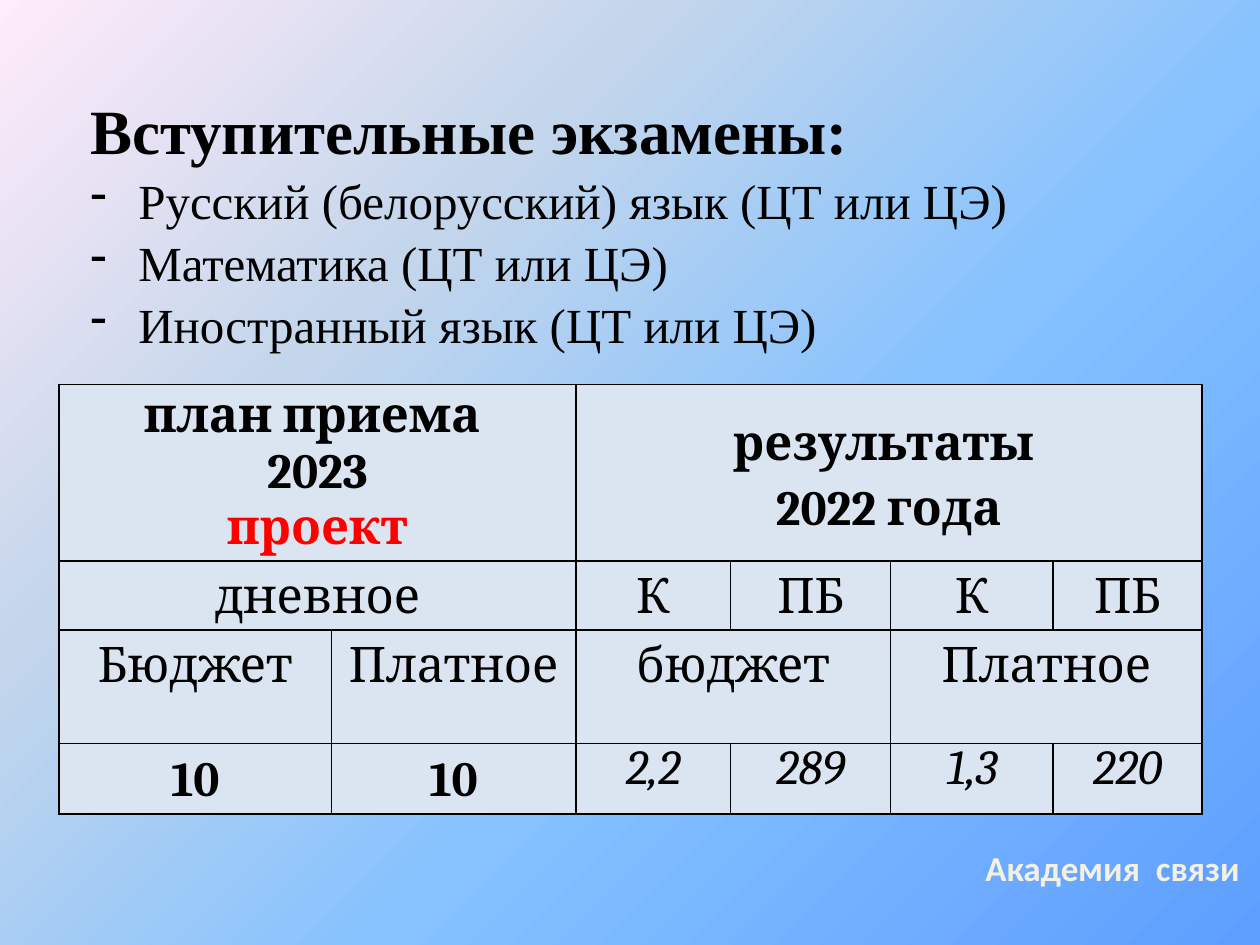
from dataclasses import dataclass

from lxml import etree
from pptx import Presentation
from pptx import util as u
from pptx.dml.color import RGBColor
from pptx.enum import text
from pptx.oxml import ns, parse_xml


@dataclass(frozen=True)
class Theme:
    """Colours, fonts and type sizes of the deck."""
    ink: str = "000000"
    accent: str = "FF0000"
    cell: str = "DBE5F1"
    footer: str = "F4F1E3"
    footer_edge: str = "254061"
    backdrop: tuple = ((0, "5E9EFF"), (40, "85C2FF"), (70, "C4D6EB"), (100, "FFEBFA"))
    body_font: str = "Times New Roman"
    table_font: str = "Cambria"
    footer_font: str = "Calibri"
    heading_size: int = 36
    text_size: int = 28
    footer_size: int = 20


THEME = Theme()
CENTER = text.PP_ALIGN.CENTER
EXAMS = ("Русский (белорусский) язык (ЦТ или ЦЭ)", "Математика (ЦТ или ЦЭ)",
         "Иностранный язык (ЦТ или ЦЭ)")
COLUMNS = (2.16, 1.94, 1.23, 1.27, 1.29, 1.18)
ROWS = (1.39, 0.55, 0.9, 0.56)
BOLD = {"bold": True}
TOTAL = {"line_spacing": 1.15, "space_after": u.Pt(10)}
SCORE = {"line_spacing": 0.9}
SPACED = {"line_spacing": 1.15}
TIGHT = {}
CELLS = (
    (0, 0, 2, ("план приема ", "2023", "проект"), BOLD, TIGHT),
    (0, 2, 4, ("результаты ", "2022 года"), BOLD, SPACED),
    (1, 0, 2, ("дневное",), {}, SPACED),
    *((1, 2 + i, 1, (name,), {}, SPACED) for i, name in enumerate(("К", "ПБ") * 2)),
    (2, 0, 1, ("Бюджет",), {}, SPACED),
    (2, 1, 1, ("Платное",), {}, SPACED),
    (2, 2, 2, ("бюджет",), {}, SPACED),
    (2, 4, 2, ("Платное",), {}, SPACED),
    *((3, i, 1, ("10",), BOLD, TOTAL) for i in range(2)),
    *((3, 2 + i, 1, (score,), {"italic": True}, SCORE)
      for i, score in enumerate(("2,2", "289", "1,3", "220"))),
)


def assign(target, values):
    """Set every attribute named in values on target."""
    for name, value in values.items():
        setattr(target, name, value)


def add_span(para, words, color, **font):
    """Append a run with the given colour and font values."""
    span = para.add_run()
    span.text = words
    assign(span.font, font)
    span.font.color.rgb = RGBColor.from_string(color)
    return span


def line_xml(tag, color):
    """Return a one-point solid line element."""
    return parse_xml(f'<a:{tag} {ns.nsdecls("a")} w="12700"><a:solidFill>'
                     f'<a:srgbClr val="{color}"/></a:solidFill></a:{tag}>')


def paint_background(page):
    """Fill the page with a circular gradient from its lower right corner."""
    page.background.fill.gradient()
    gradient = page.element.find(".//" + ns.qn("a:gradFill"))
    stops = "".join(f'<a:gs pos="{place * 1000}"><a:srgbClr val="{color}"/></a:gs>'
                    for place, color in THEME.backdrop)
    gradient.getparent().replace(gradient, parse_xml(
        f'<a:gradFill {ns.nsdecls("a")} rotWithShape="1"><a:gsLst>{stops}</a:gsLst>'
        '<a:path path="circle"><a:fillToRect l="100000" t="100000"/></a:path></a:gradFill>'))


def add_exams(page, left, top, width, height):
    """Place the heading and the dashed list of exams."""
    frame = page.shapes.add_textbox(left, top, width, height).text_frame
    assign(frame, {"word_wrap": True, "margin_top": u.Inches(0.08)})
    for index, words in enumerate(("Вступительные экзамены:", *EXAMS)):
        para = frame.paragraphs[0] if index == 0 else frame.add_paragraph()
        assign(para, {"alignment": text.PP_ALIGN.JUSTIFY, "line_spacing": 1.05})
        props = para._p.get_or_add_pPr()
        props.set("marL", str(u.Inches(0.38)))
        props.set("indent", str(-u.Inches(0.38)))
        if index:
            etree.SubElement(props, ns.qn("a:buChar")).set("char", "-")
        add_span(para, words, THEME.ink, name=THEME.body_font, bold=index == 0,
                 size=u.Pt(THEME.text_size if index else THEME.heading_size))


def style_cell(cell):
    """Give a cell its fill, margins and borders."""
    side = u.Inches(0.02)
    assign(cell, {"margin_left": side, "margin_right": side,
                  "margin_top": 0, "margin_bottom": 0})
    cell.fill.solid()
    cell.fill.fore_color.rgb = RGBColor.from_string(THEME.cell)
    props = cell._tc.get_or_add_tcPr()
    for index, tag in enumerate(("lnL", "lnR", "lnT", "lnB")):
        props.insert(index, line_xml(tag, THEME.ink))


def add_admissions(page, left, top, width, height):
    """Place the table of planned places and last year's results."""
    table = page.shapes.add_table(len(ROWS), len(COLUMNS), left, top, width, height).table
    assign(table, {"first_row": False, "horz_banding": False})
    for column, size in zip(table.columns, COLUMNS):
        column.width = u.Inches(size)
    for row, size in zip(table.rows, ROWS):
        row.height = u.Inches(size)
    for cell in table.iter_cells():
        style_cell(cell)
    for row, column, extent, lines, font, layout in CELLS:
        cell = table.cell(row, column)
        if extent > 1:
            cell.merge(table.cell(row, column + extent - 1))
        if row == 0:
            cell.vertical_anchor = text.MSO_ANCHOR.MIDDLE
        for index, words in enumerate(lines):
            frame = cell.text_frame
            para = frame.paragraphs[0] if index == 0 else frame.add_paragraph()
            assign(para, {"alignment": CENTER, **layout})
            add_span(para, words, THEME.accent if words == "проект" else THEME.ink,
                     name=THEME.table_font, size=u.Pt(THEME.text_size), **font)


def add_footer(page, left, top, width, height):
    """Place the outlined name of the academy."""
    frame = page.shapes.add_textbox(left, top, width, height).text_frame
    frame.word_wrap = True
    para = frame.paragraphs[0]
    para.alignment = CENTER
    span = add_span(para, "Академия  связи", THEME.footer, name=THEME.footer_font,
                    size=u.Pt(THEME.footer_size), bold=True)
    span.font._element.insert(0, line_xml("ln", THEME.footer_edge))


def main():
    """Build the admissions slide and save it."""
    deck = Presentation()
    assign(deck, {"slide_width": u.Inches(10), "slide_height": u.Inches(7.5)})
    page = deck.slides.add_slide(deck.slide_layouts[6])
    paint_background(page)
    for place, box in ((add_footer, (7.66, 6.67, 2.34, 0.44)),
                       (add_exams, (0.62, 0.62, 9, 2.39)),
                       (add_admissions, (0.47, 3.05, sum(COLUMNS), sum(ROWS)))):
        place(page, *map(u.Inches, box))
    deck.save("out.pptx")


if __name__ == "__main__":
    main()
